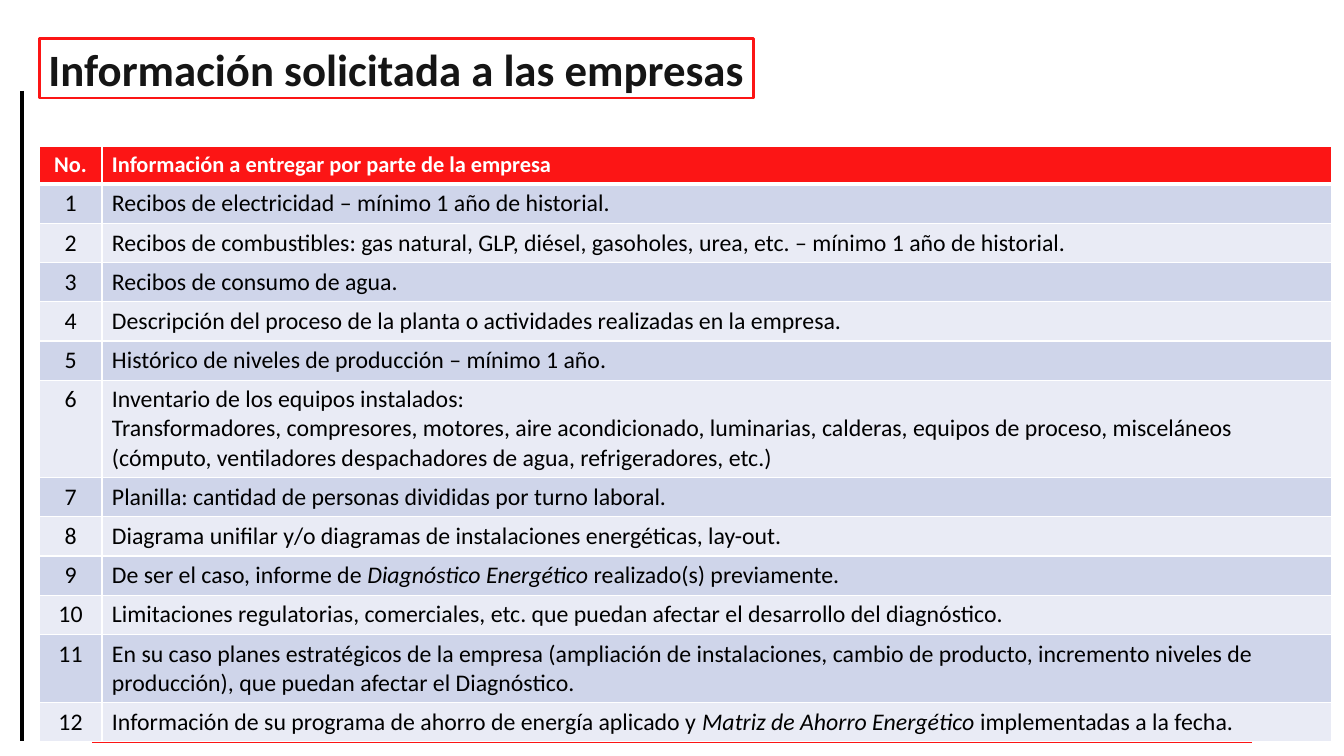
import pptx
import pptx.dml.color
import pptx.enum.shapes
import pptx.enum.text
import pptx.oxml
import pptx.oxml.ns
import pptx.util

Pt = pptx.util.Pt
RGBColor = pptx.dml.color.RGBColor
PP_ALIGN = pptx.enum.text.PP_ALIGN

RED = RGBColor(0xFC, 0x15, 0x15)
BLACK = RGBColor(0x00, 0x00, 0x00)
WHITE = RGBColor(0xFF, 0xFF, 0xFF)
TITLE_INK = RGBColor(0x15, 0x15, 0x15)
BAND_DARK = RGBColor(0xCF, 0xD5, 0xEA)
BAND_LIGHT = RGBColor(0xE9, 0xEB, 0xF5)

TITLE_FONT = {"name": "Calibri", "size": Pt(32), "bold": True}
HEADER_FONT = {"name": "Calibri", "size": Pt(16), "bold": True}
BODY_FONT = {"name": "Calibri", "size": Pt(17), "bold": False}

HEADER = ("No.", "Información a entregar por parte de la empresa")
# Each item is a list of paragraphs; each paragraph is a list of runs,
# which alternate between upright and italic.
ITEMS = [
    [["Recibos de electricidad – mínimo 1 año de historial."]],
    [["Recibos de combustibles: gas natural, GLP, diésel, gasoholes, urea, etc. "
      "– mínimo 1 año de historial."]],
    [["Recibos de consumo de agua."]],
    [["Descripción del proceso de la planta o actividades realizadas en la empresa."]],
    [["Histórico de niveles de producción – mínimo 1 año."]],
    [["Inventario de los equipos instalados:"],
     ["Transformadores, compresores, motores, aire acondicionado, luminarias, calderas, "
      "equipos de proceso, misceláneos (cómputo, ventiladores despachadores de agua, "
      "refrigeradores, etc.)"]],
    [["Planilla: cantidad de personas divididas por turno laboral."]],
    [["Diagrama unifilar y/o diagramas de instalaciones energéticas, lay-out."]],
    [["De ser el caso, informe de ", "Diagnóstico Energético ",
      "realizado(s) previamente."]],
    [["Limitaciones regulatorias, comerciales, etc. que puedan afectar el desarrollo "
      "del diagnóstico."]],
    [["En su caso planes estratégicos de la empresa (ampliación de instalaciones, cambio "
      "de producto, incremento niveles de producción), que puedan afectar el Diagnóstico."]],
    [["Información de su programa de ahorro de energía aplicado y ",
      "Matriz de Ahorro Energético ", "implementadas a la fecha."]],
]
COLUMN_WIDTHS = (44.8, 878.4)
HEADER_HEIGHT = 26
ROW_HEIGHT = 27.2
TALL_ROWS = {6: 68.5, 11: 47.8}


def set_format(target, values, color):
    for name, value in values.items():
        setattr(target, name, value)
    target.color.rgb = color


def fill_text(text_frame, paragraphs, font, color, alignment):
    for index, runs in enumerate(paragraphs):
        paragraph = text_frame.paragraphs[0] if index == 0 else text_frame.add_paragraph()
        paragraph.alignment = alignment
        for position, text in enumerate(runs):
            run = paragraph.add_run()
            run.text = text
            set_format(run.font, {**font, "italic": position % 2 == 1}, color)


def add_rule(slide, start, end, color):
    rule = slide.shapes.add_connector(
        pptx.enum.shapes.MSO_CONNECTOR.STRAIGHT, *map(Pt, start + end))
    rule.line.color.rgb = color
    rule.line.width = Pt(3)
    properties = rule._element.spPr
    properties.append(properties.makeelement(pptx.oxml.ns.qn("a:effectLst"), {}))


def add_title(slide, text):
    box = slide.shapes.add_shape(
        pptx.enum.shapes.MSO_SHAPE.RECTANGLE, Pt(28), Pt(27.5), Pt(510.5), Pt(42.5))
    box.shadow.inherit = False
    box.fill.background()
    box.line.color.rgb = RED
    box.line.width = Pt(2)
    frame = box.text_frame
    frame.word_wrap = True
    frame.vertical_anchor = pptx.enum.text.MSO_ANCHOR.MIDDLE
    for side in ("left", "top", "right", "bottom"):
        setattr(frame, f"margin_{side}", Pt(2))
    fill_text(frame, [[text]], TITLE_FONT, TITLE_INK, PP_ALIGN.CENTER)


def set_borders(cell, widths):
    properties = cell._tc.get_or_add_tcPr()
    for side, width in widths.items():
        properties.append(pptx.oxml.parse_xml(
            f'<a:ln{side} {pptx.oxml.ns.nsdecls("a")} w="{Pt(width)}">'
            f'<a:solidFill><a:srgbClr val="{WHITE}"/></a:solidFill></a:ln{side}>'))


def add_request_table(slide):
    rows = [[[[text]] for text in HEADER]]
    rows += [[[[str(number)]], item] for number, item in enumerate(ITEMS, 1)]
    heights = [HEADER_HEIGHT]
    heights += [TALL_ROWS.get(number, ROW_HEIGHT) for number in range(1, len(rows))]
    table = slide.shapes.add_table(
        len(rows), len(COLUMN_WIDTHS), Pt(28), Pt(104.7),
        Pt(sum(COLUMN_WIDTHS)), Pt(sum(heights))).table
    for column, width in zip(table.columns, COLUMN_WIDTHS):
        column.width = Pt(width)

    for row_index, contents in enumerate(rows):
        table.rows[row_index].height = Pt(heights[row_index])
        if row_index == 0:
            font, ink, fill = HEADER_FONT, WHITE, RED
        else:
            font, ink = BODY_FONT, BLACK
            fill = BAND_DARK if row_index % 2 else BAND_LIGHT
        # A thicker line parts the header from the items
        borders = {"L": 1, "R": 1, "T": 3 if row_index == 1 else 1,
                   "B": 3 if row_index == 0 else 1}
        for column_index, paragraphs in enumerate(contents):
            cell = table.cell(row_index, column_index)
            set_borders(cell, borders)
            cell.fill.solid()
            cell.fill.fore_color.rgb = fill
            alignment = PP_ALIGN.LEFT if column_index else PP_ALIGN.CENTER
            fill_text(cell.text_frame, paragraphs, font, ink, alignment)


def main():
    presentation = pptx.Presentation()
    presentation.slide_width = Pt(960)
    presentation.slide_height = Pt(540)
    slide = presentation.slides.add_slide(presentation.slide_layouts[6])

    # Frame lines
    add_rule(slide, (66, 529.5), (894, 529.5), RED)
    add_rule(slide, (16, 65), (16, 529.5), BLACK)

    # Requested information and title
    add_request_table(slide)
    add_title(slide, "Información solicitada a las empresas")

    presentation.save("out.pptx")


if __name__ == "__main__":
    main()
